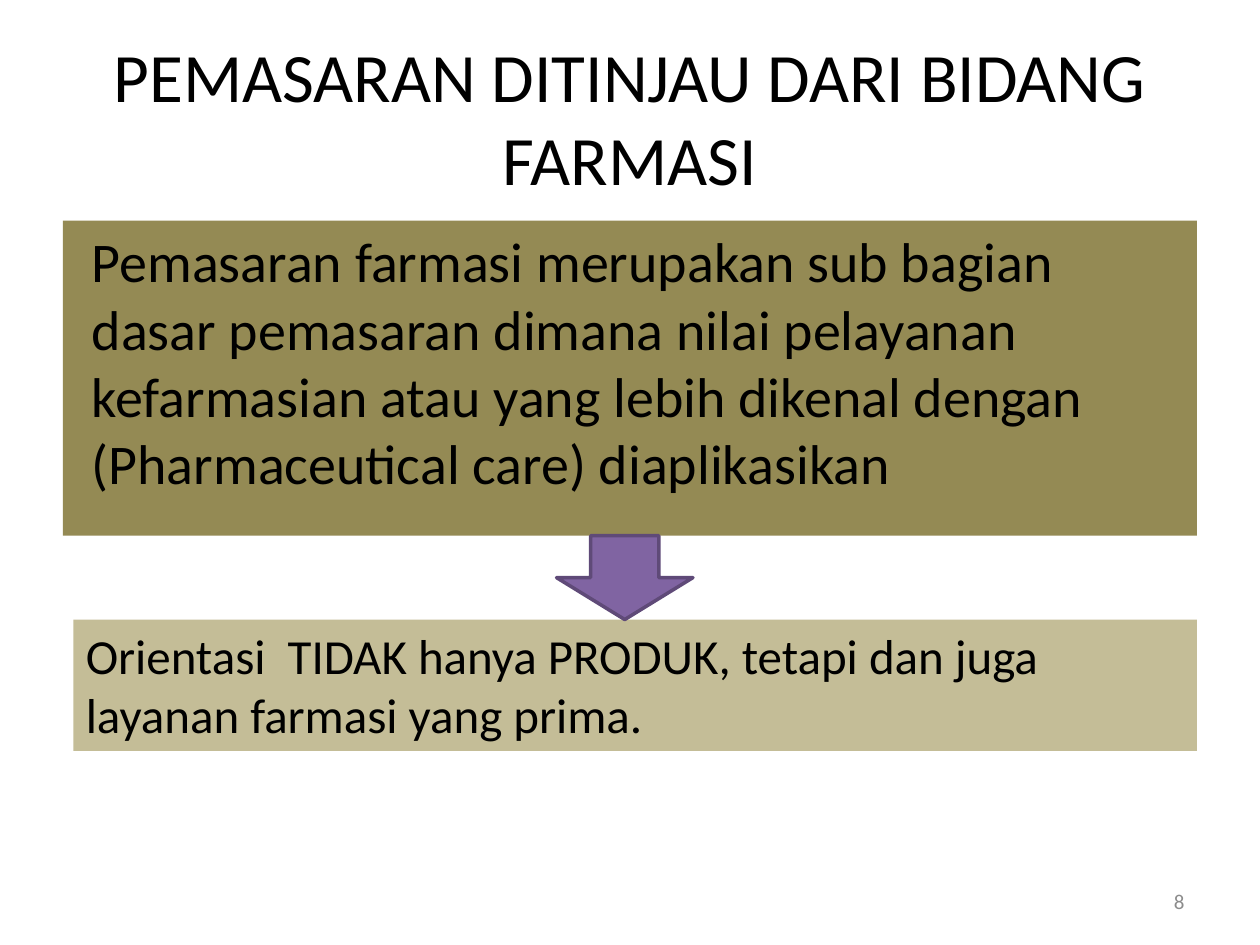
from pptx import Presentation
from pptx.dml.color import RGBColor
from pptx.enum.shapes import MSO_SHAPE as SHAPE
from pptx.enum.text import MSO_ANCHOR as ANCHOR, PP_ALIGN as ALIGN
from pptx.util import Cm, Pt

COLORS = {
    "text": "000000",
    "number": "8C8C8C",
    "definition": "948A54",
    "orientation": "C4BD97",
    "arrow": "8064A2",
    "arrow_line": "5F4A78",
}


def color(name):
    return RGBColor.from_string(COLORS[name])


def add_text(text, left, top, width, height, size, fill=None, ink="text",
             align=ALIGN.LEFT, anchor=ANCHOR.TOP, inset=0.25):
    box = [Cm(v) for v in (left, top, width, height)]
    if fill:
        s = slide.shapes.add_shape(SHAPE.RECTANGLE, *box)
        s.shadow.inherit = False
        s.fill.solid()
        s.fill.fore_color.rgb = color(fill)
        s.line.fill.background()
    else:
        s = slide.shapes.add_textbox(*box)
    tf = s.text_frame
    tf.word_wrap = True
    tf.vertical_anchor = anchor
    tf.margin_left = Cm(inset)
    p = tf.paragraphs[0]
    p.alignment = align
    r = p.add_run()
    r.text = text
    r.font.name = "Calibri"
    r.font.size = Pt(size)
    r.font.color.rgb = color(ink)


prs = Presentation()
prs.slide_width, prs.slide_height = Cm(25.4), Cm(19.05)
slide = prs.slides.add_slide(prs.slide_layouts[6])

# Title
add_text("PEMASARAN DITINJAU DARI BIDANG FARMASI", 1.27, 0.76, 22.86, 3.18,
         39.6, align=ALIGN.CENTER, anchor=ANCHOR.MIDDLE)

# Definition and the orientation that follows from it
add_text("Pemasaran farmasi merupakan sub bagian dasar pemasaran dimana nilai "
         "pelayanan kefarmasian atau yang lebih dikenal dengan "
         "(Pharmaceutical care) diaplikasikan",
         1.27, 4.45, 22.86, 6.35, 32, fill="definition", inset=0.58)
add_text("Orientasi  TIDAK hanya PRODUK, tetapi dan juga layanan farmasi "
         "yang prima.", 1.48, 12.49, 22.65, 2.65, 28, fill="orientation")

# Arrow between the two boxes
arrow = slide.shapes.add_shape(SHAPE.DOWN_ARROW, Cm(11.22), Cm(10.8),
                               Cm(2.75), Cm(1.69))
arrow.shadow.inherit = False
arrow.fill.solid()
arrow.fill.fore_color.rgb = color("arrow")
arrow.line.color.rgb = color("arrow_line")
arrow.line.width = Pt(2)

# Slide number
add_text("8", 18.2, 17.66, 5.93, 1.01, 12, ink="number",
         align=ALIGN.RIGHT, anchor=ANCHOR.MIDDLE)

prs.save("out.pptx")
